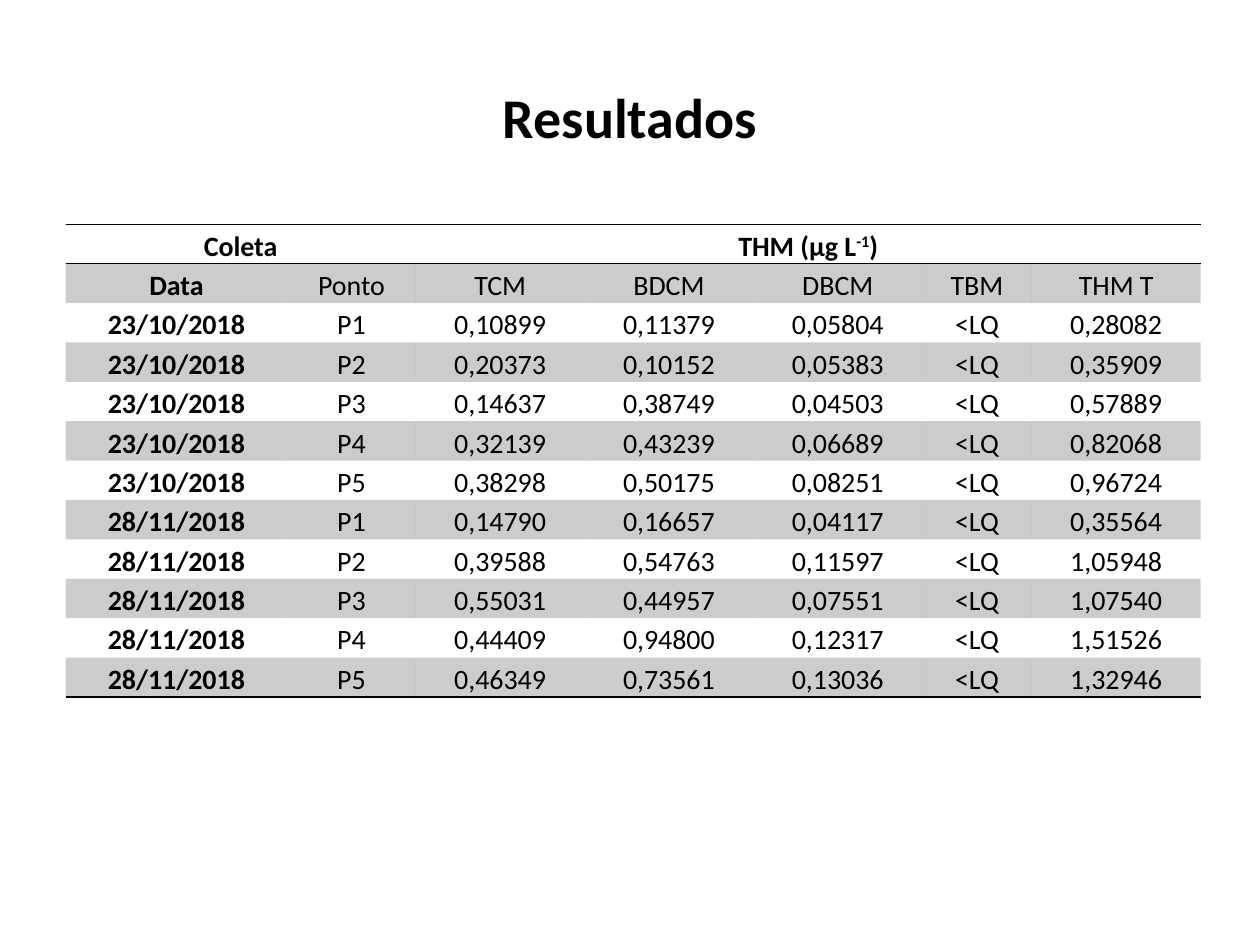
import lxml.etree
import pptx
import pptx.dml.color
import pptx.enum.text
import pptx.oxml
import pptx.oxml.ns
import pptx.util

Inches = pptx.util.Inches
Pt = pptx.util.Pt
qn = pptx.oxml.ns.qn
ALIGN = pptx.enum.text.PP_ALIGN
ANCHOR = pptx.enum.text.MSO_ANCHOR

COLORS = {"ink": "000000", "band": "000000"}
BAND_ALPHA = 20
PLAIN_STYLE = "{2D5ABB26-0587-4C30-8999-92F81FD0307C}"
WIDTHS = [1.76, 1.02, 1.34, 1.34, 1.34, 0.87, 1.34]
HEADS = ["Data", "Ponto", "TCM", "BDCM", "DBCM", "TBM", "THM T"]
DATES = ["23/10/2018", "28/11/2018"]
# TCM, BDCM, DBCM and total for points P1 to P5 on each date
VALUES = [
    ["0,10899", "0,11379", "0,05804", "0,28082"],
    ["0,20373", "0,10152", "0,05383", "0,35909"],
    ["0,14637", "0,38749", "0,04503", "0,57889"],
    ["0,32139", "0,43239", "0,06689", "0,82068"],
    ["0,38298", "0,50175", "0,08251", "0,96724"],
    ["0,14790", "0,16657", "0,04117", "0,35564"],
    ["0,39588", "0,54763", "0,11597", "1,05948"],
    ["0,55031", "0,44957", "0,07551", "1,07540"],
    ["0,44409", "0,94800", "0,12317", "1,51526"],
    ["0,46349", "0,73561", "0,13036", "1,32946"],
]
CELL = {
    "margin_left": Inches(0.05), "margin_right": Inches(0.05),
    "margin_top": 0, "margin_bottom": 0,
}


def style(item, values):
    for name, value in values.items():
        setattr(item, name, value)


def write(para, parts, size, bold):
    """Fill a centred paragraph; parts are (text, raised) pairs."""
    para.alignment = ALIGN.CENTER
    for text, raised in parts:
        run = para.add_run()
        run.text = text
        style(run.font, {"name": "Calibri", "size": Pt(size), "bold": bold})
        run.font.color.rgb = pptx.dml.color.RGBColor.from_string(COLORS["ink"])
        if raised:
            run.font._element.set("baseline", "30000")


def rule(cell, sides):
    """Draw 1 pt lines on the named sides, ahead of the cell's fill."""
    props = cell._tc.get_or_add_tcPr()
    for place, side in enumerate(sides):
        line = pptx.oxml.parse_xml(
            f'<a:ln{side} {pptx.oxml.ns.nsdecls("a")} w="{Pt(1)}"><a:solidFill>'
            f'<a:srgbClr val="{COLORS["ink"]}"/></a:solidFill></a:ln{side}>')
        props.insert(place, line)


def shade(cell, banded):
    if not banded:
        cell.fill.background()
        return
    cell.fill.solid()
    cell.fill.fore_color.rgb = pptx.dml.color.RGBColor.from_string(COLORS["band"])
    color = cell._tc.tcPr.find(".//" + qn("a:srgbClr"))
    lxml.etree.SubElement(color, qn("a:alpha")).set("val", str(BAND_ALPHA * 1000))


def add_title(slide, box):
    title = slide.shapes.title
    style(title, dict(zip(("left", "top", "width", "height"), box)))
    title.text_frame.vertical_anchor = ANCHOR.MIDDLE
    write(title.text_frame.paragraphs[0], [("Resultados", False)], 32, True)


def add_grid(slide, box):
    # Two header rows, then one row for each sample
    rows = [["Coleta"] + [""] * 6, HEADS]
    for i, (tcm, bdcm, dbcm, total) in enumerate(VALUES):
        day, point = divmod(i, 5)
        rows.append([DATES[day], f"P{point + 1}", tcm, bdcm, dbcm, "<LQ", total])

    table = slide.shapes.add_table(len(rows), len(WIDTHS), *box).table
    style(table, {"first_row": False, "horz_banding": False})
    table._tbl.tblPr.find(qn("a:tableStyleId")).text = PLAIN_STYLE
    for column, width in zip(table.columns, WIDTHS):
        column.width = Inches(width)
    table.cell(0, 0).merge(table.cell(0, 1))
    table.cell(0, 2).merge(table.cell(0, 6))

    sides = {0: "TB", len(rows) - 1: "B"}
    for r, row in enumerate(rows):
        for c, text in enumerate(row):
            cell = table.cell(r, c)
            style(cell, CELL)
            # The measured values of P3 to P5 sit at the foot of their cells
            low = r > 1 and c > 1 and (r - 2) % 5 > 1
            cell.vertical_anchor = ANCHOR.BOTTOM if low else ANCHOR.MIDDLE
            shade(cell, r % 2 == 1)
            rule(cell, sides.get(r, ""))
            if cell.is_spanned:
                continue
            parts = [(text, False)]
            if (r, c) == (0, 2):
                parts = [("THM (µg L", False), ("-1", True), (")", False)]
            para = cell.text_frame.paragraphs[0]
            para.line_spacing = 1.15
            write(para, parts, 16, r == 0 or c == 0)


def main():
    deck = pptx.Presentation()
    style(deck, {"slide_width": Inches(10), "slide_height": Inches(7.5)})
    slide = deck.slides.add_slide(deck.slide_layouts[5])
    add_title(slide, [Inches(n) for n in (0.5, 0.3, 9, 1.25)])
    add_grid(slide, [Inches(n) for n in (0.52, 1.78, 9, 3.46)])
    deck.save("out.pptx")


if __name__ == "__main__":
    main()
